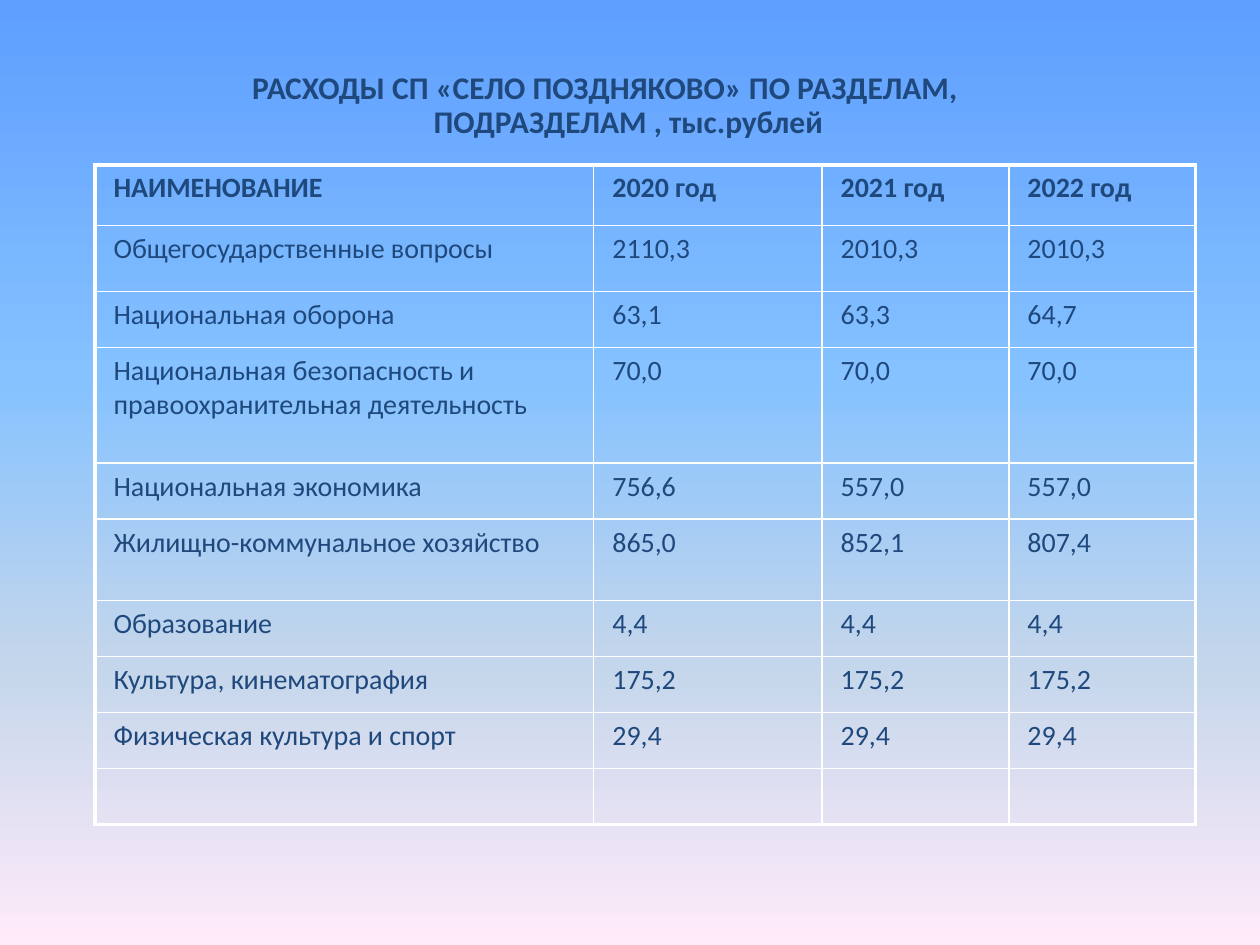
from dataclasses import dataclass

from lxml import etree
from pptx import Presentation
from pptx.dml.color import RGBColor
from pptx.enum import text
from pptx.oxml.ns import qn
from pptx.util import Pt


@dataclass(frozen=True)
class Theme:
    font: str = "Calibri"
    ink: str = "1F497D"
    border: str = "FFFFFF"
    background: tuple = ((0, "5E9EFF"), (40, "85C2FF"), (70, "C4D6EB"), (100, "FFEBFA"))
    title_size: float = 18
    cell_size: float = 16
    outer_line: float = 2.25
    inner_line: float = 1


@dataclass(frozen=True)
class ExpenseRow:
    name: str
    values: tuple[str, str, str]
    height: float


THEME = Theme()
TITLE = "РАСХОДЫ СП «СЕЛО ПОЗДНЯКОВО» ПО РАЗДЕЛАМ, ПОДРАЗДЕЛАМ , тыс.рублей"
COLUMN_WIDTHS = (285, 130.5, 106.75, 106.75)
ROWS = (
    ExpenseRow("НАИМЕНОВАНИЕ", ("2020 год", "2021 год", "2022 год"), 34.5),
    ExpenseRow("Общегосударственные вопросы", ("2110,3", "2010,3", "2010,3"), 37.75),
    ExpenseRow("Национальная оборона", ("63,1", "63,3", "64,7"), 32),
    ExpenseRow("Национальная безопасность и правоохранительная деятельность",
               ("70,0", "70,0", "70,0"), 66.25),
    ExpenseRow("Национальная экономика", ("756,6", "557,0", "557,0"), 32),
    ExpenseRow("Жилищно-коммунальное хозяйство", ("865,0", "852,1", "807,4"), 46.5),
    ExpenseRow("Образование", ("4,4", "4,4", "4,4"), 32),
    ExpenseRow("Культура, кинематография", ("175,2", "175,2", "175,2"), 32),
    ExpenseRow("Физическая культура и спорт", ("29,4", "29,4", "29,4"), 32),
    ExpenseRow("", ("", "", ""), 32),
)


def add_color(parent, color: str) -> None:
    etree.SubElement(parent, qn("a:srgbClr"), val=color)


def paint_background(slide) -> None:
    fill = slide.background.fill
    fill.gradient()
    fill.gradient_angle = 270
    stops = slide.element.find(".//" + qn("a:gsLst"))
    for stop in list(stops):
        stops.remove(stop)
    for percent, color in THEME.background:
        add_color(etree.SubElement(stops, qn("a:gs"), pos=str(percent * 1000)), color)


def format_paragraph(paragraph, size: float, bold: bool, left: float, indent: float) -> None:
    paragraph.space_before = Pt(size * 0.2)
    properties = paragraph._p.get_or_add_pPr()
    properties.set("marL", str(Pt(left)))
    properties.set("indent", str(Pt(indent)))
    for run in paragraph.runs:
        run.font.name = THEME.font
        run.font.size = Pt(size)
        run.font.bold = bold
        run.font.color.rgb = RGBColor.from_string(THEME.ink)


def add_title(slide) -> None:
    box = slide.shapes.add_textbox(Pt(93.6), Pt(37.5), Pt(504), Pt(62.5))
    frame = box.text_frame
    frame.word_wrap = True
    frame.text = TITLE
    paragraph = frame.paragraphs[0]
    paragraph.alignment = text.PP_ALIGN.CENTER
    paragraph.line_spacing = 0.9
    format_paragraph(paragraph, THEME.title_size, True, 27, -27)


def set_borders(cell, outer_sides: dict[str, bool]) -> None:
    """Draw the four borders, heavier on the sides marked as outer."""
    properties = cell._tc.get_or_add_tcPr()
    for side, outer in outer_sides.items():
        width = THEME.outer_line if outer else THEME.inner_line
        line = etree.SubElement(properties, qn(f"a:ln{side}"), w=str(Pt(width)))
        add_color(etree.SubElement(line, qn("a:solidFill")), THEME.border)


def add_expense_table(slide) -> None:
    row_count, column_count = len(ROWS), len(COLUMN_WIDTHS)
    table = slide.shapes.add_table(
        row_count, column_count, Pt(54.25), Pt(94.25),
        Pt(sum(COLUMN_WIDTHS)), Pt(sum(row.height for row in ROWS))).table
    table.first_row = table.horz_banding = False
    for column, width in zip(table.columns, COLUMN_WIDTHS):
        column.width = Pt(width)
    for i, row in enumerate(ROWS):
        table.rows[i].height = Pt(row.height)
        for j, content in enumerate((row.name, *row.values)):
            cell = table.cell(i, j)
            cell.text_frame.text = content
            format_paragraph(cell.text_frame.paragraphs[0], THEME.cell_size, i == 0, 3.5, 0)
            set_borders(cell, {"L": j == 0, "R": j == column_count - 1,
                               "T": i == 0, "B": i == row_count - 1})
            cell.fill.background()


def main() -> None:
    presentation = Presentation()
    presentation.slide_width, presentation.slide_height = Pt(720), Pt(540)
    slide = presentation.slides.add_slide(presentation.slide_layouts[6])
    paint_background(slide)
    add_title(slide)
    add_expense_table(slide)
    presentation.save("out.pptx")


if __name__ == "__main__":
    main()
